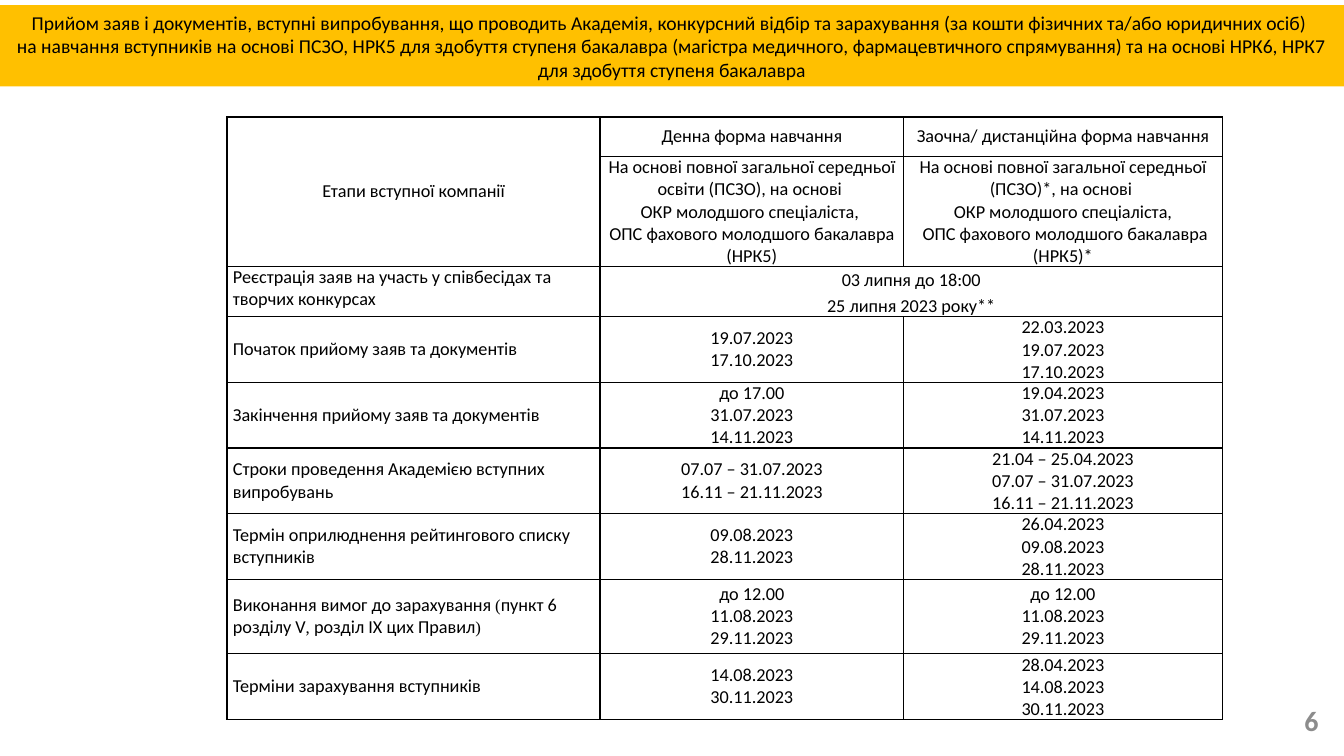
from lxml import etree
from pptx import Presentation
from pptx.dml.color import RGBColor
from pptx.enum.shapes import MSO_SHAPE
from pptx.enum.text import MSO_ANCHOR, PP_ALIGN
from pptx.oxml.ns import qn
from pptx.util import Cm, Pt

LEFT, CENTER, RIGHT = PP_ALIGN.LEFT, PP_ALIGN.CENTER, PP_ALIGN.RIGHT
TOP, MIDDLE = MSO_ANCHOR.TOP, MSO_ANCHOR.MIDDLE
RECTANGLE = MSO_SHAPE.RECTANGLE

BODY = ("Calibri", 13)
PUNCTUATION = ("Times New Roman", 12)
BLACK, WHITE, AMBER, GRAY = "000000", "FFFFFF", "FFC000", "8C8C8C"

TITLE = (
    "Прийом заяв і документів, вступні випробування, що проводить Академія, конкурсний відбір "
    "та зарахування (за кошти фізичних та/або юридичних осіб) \v"
    "на навчання вступників на основі ПСЗО, НРК5 для здобуття ступеня бакалавра (магістра "
    "медичного, фармацевтичного спрямування) та на основі НРК6, НРК7 для здобуття ступеня бакалавра"
)
STAGES_HEADING = "Етапи вступної компанії"
STUDY_FORMS = [
    ("Денна форма навчання",
     "На основі повної загальної середньої освіти (ПСЗО), на основі \v"
     "ОКР молодшого спеціаліста, \vОПС фахового молодшого бакалавра (НРК5)"),
    ("Заочна/ дистанційна форма навчання",
     "На основі повної загальної середньої (ПСЗО)*, на основі \v"
     "ОКР молодшого спеціаліста,\v ОПС фахового молодшого бакалавра (НРК5)*"),
]
REGISTRATION = "Реєстрація заяв на участь у співбесідах та творчих конкурсах"
REGISTRATION_DATES = ["03 липня до 18:00", "25 липня 2023 року**"]
ENROLMENT_REQUIREMENTS = [
    ("Виконання вимог до зарахування ", BODY),
    ("(", PUNCTUATION),
    ("пункт 6 розділу V", BODY),
    (", ", PUNCTUATION),
    ("розділ ІХ цих Правил", BODY),
    (")", PUNCTUATION),
]
STAGES = [
    ("Початок прийому заяв та документів",
     ["19.07.2023", "17.10.2023"],
     ["22.03.2023", "19.07.2023", "17.10.2023"]),
    ("Закінчення прийому заяв та документів",
     ["до 17.00", "31.07.2023", "14.11.2023"],
     ["19.04.2023", "31.07.2023", "14.11.2023"]),
    ("Строки проведення Академією вступних випробувань",
     ["07.07 – 31.07.2023", "16.11 – 21.11.2023"],
     ["21.04 – 25.04.2023", "07.07 – 31.07.2023", "16.11 – 21.11.2023"]),
    ("Термін оприлюднення рейтингового списку вступників",
     ["09.08.2023", "28.11.2023"],
     ["26.04.2023", "09.08.2023", "28.11.2023"]),
    (ENROLMENT_REQUIREMENTS,
     ["до 12.00", "11.08.2023", "29.11.2023"],
     ["до 12.00", "11.08.2023", "29.11.2023"]),
    ("Терміни зарахування вступників",
     ["14.08.2023", "30.11.2023"],
     ["28.04.2023", "14.08.2023", "30.11.2023"]),
]
COLUMN_WIDTHS = [9.4, 7.65, 8.03]
ROW_HEIGHTS = [0.99, 2.77, 1.27, 1.65, 1.65, 1.65, 1.65, 1.88, 1.63]


def rgb(color):
    return RGBColor.from_string(color)


def add_run(paragraph, text, font=BODY, color=BLACK, bold=False):
    """Add text in one format; a vertical tab starts a new line."""
    for index, line in enumerate(text.split("\v")):
        if index:
            paragraph.add_line_break()
        run = paragraph.add_run()
        run.text = line
        run.font.name = font[0]
        run.font.size = Pt(font[1])
        run.font.color.rgb = rgb(color)
        run.font.bold = bold


def add_title_band(slide):
    band = slide.shapes.add_shape(RECTANGLE, 0, Cm(0.13), Cm(33.87), Cm(2.05))
    band.shadow.inherit = False
    band.fill.solid()
    band.fill.fore_color.rgb = rgb(AMBER)
    band.line.fill.background()
    frame = band.text_frame
    frame.word_wrap = True
    frame.vertical_anchor = MIDDLE
    paragraph = frame.paragraphs[0]
    paragraph.alignment = CENTER
    add_run(paragraph, TITLE, ("Calibri", 14))


def add_page_number(slide, number):
    frame = slide.shapes.add_textbox(Cm(31.5), Cm(17.65), Cm(1.98), Cm(1.02)).text_frame
    frame.word_wrap = True
    frame.vertical_anchor = MIDDLE
    paragraph = frame.paragraphs[0]
    paragraph.alignment = RIGHT
    add_run(paragraph, number, ("Calibri", 20), GRAY, bold=True)


def style_cell(cell):
    """Give the cell black borders, a white fill and narrow margins."""
    properties = cell._tc.get_or_add_tcPr()
    for side in ("lnL", "lnR", "lnT", "lnB"):
        border = etree.SubElement(properties, qn(f"a:{side}"), w=str(Pt(1)))
        fill = etree.SubElement(border, qn("a:solidFill"))
        etree.SubElement(fill, qn("a:srgbClr"), val=BLACK)
    cell.fill.solid()
    cell.fill.fore_color.rgb = rgb(WHITE)
    cell.margin_left = cell.margin_right = Cm(0.15)
    cell.margin_top = cell.margin_bottom = 0


def write_cell(cell, paragraphs, alignment=CENTER, anchor=MIDDLE, spacing=None):
    """Fill a cell; each paragraph is a string or a list of (text, font) runs."""
    cell.vertical_anchor = anchor
    frame = cell.text_frame
    for index, content in enumerate(paragraphs):
        paragraph = frame.add_paragraph() if index else frame.paragraphs[0]
        paragraph.alignment = alignment
        paragraph.line_spacing = spacing
        runs = [(content, BODY)] if isinstance(content, str) else content
        for text, font in runs:
            add_run(paragraph, text, font)


def add_schedule(slide):
    schedule = slide.shapes.add_table(
        len(ROW_HEIGHTS), len(COLUMN_WIDTHS), Cm(5.72), Cm(2.95),
        Cm(sum(COLUMN_WIDTHS)), Cm(sum(ROW_HEIGHTS))).table
    for column, width in zip(schedule.columns, COLUMN_WIDTHS):
        column.width = Cm(width)
    for row, height in zip(schedule.rows, ROW_HEIGHTS):
        row.height = Cm(height)
    for cell in schedule.iter_cells():
        style_cell(cell)

    schedule.cell(0, 0).merge(schedule.cell(1, 0))
    write_cell(schedule.cell(0, 0), [STAGES_HEADING])
    for column, (study_form, basis) in enumerate(STUDY_FORMS, start=1):
        write_cell(schedule.cell(0, column), [study_form])
        write_cell(schedule.cell(1, column), [basis])

    schedule.cell(2, 1).merge(schedule.cell(2, 2))
    write_cell(schedule.cell(2, 0), [REGISTRATION], LEFT, TOP)
    write_cell(schedule.cell(2, 1), REGISTRATION_DATES, anchor=TOP, spacing=1.15)

    for row, (stage, full_time, distance) in enumerate(STAGES, start=3):
        write_cell(schedule.cell(row, 0), [stage], LEFT)
        write_cell(schedule.cell(row, 1), full_time)
        write_cell(schedule.cell(row, 2), distance)


def main():
    presentation = Presentation()
    presentation.slide_width = Cm(33.87)
    presentation.slide_height = Cm(19.05)
    slide = presentation.slides.add_slide(presentation.slide_layouts[6])
    add_page_number(slide, "6")
    add_title_band(slide)
    add_schedule(slide)
    presentation.save("out.pptx")


if __name__ == "__main__":
    main()
